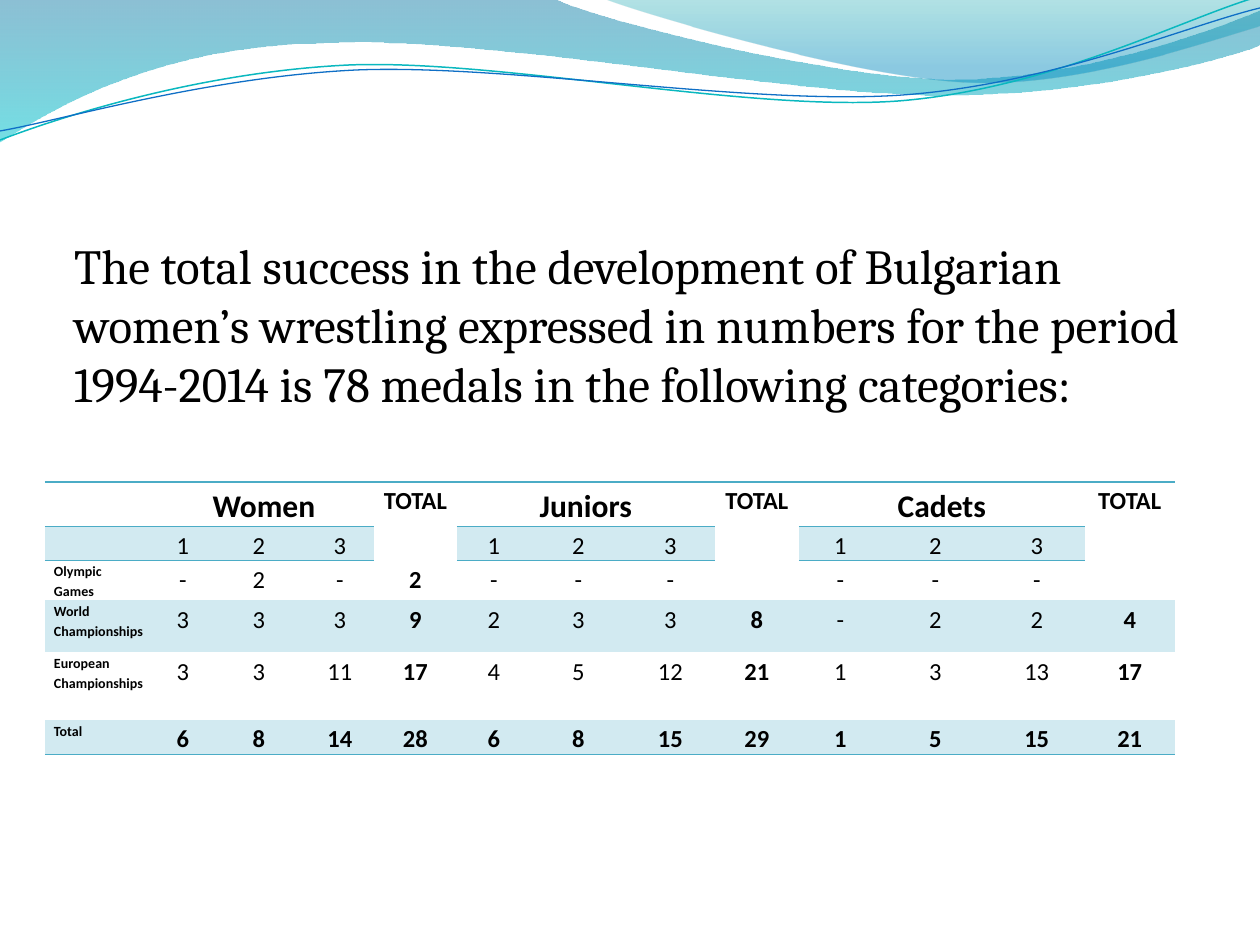
import lxml.etree
import pptx
import pptx.dml.color
import pptx.enum.text
import pptx.oxml.ns
import pptx.util

EMU_PER_PX = 914400 / 126
PLAIN_TABLE = "{2D5ABB26-0587-4C30-8999-92F81FD0307C}"
LEFT = pptx.enum.text.PP_ALIGN.LEFT
CENTER = pptx.enum.text.PP_ALIGN.CENTER

HEADLINE = (
    "The total success in the development of Bulgarian women’s wrestling "
    "expressed in numbers for the period 1994-2014 is 78 medals in the "
    "following categories:"
)
MEDALS = [
    ["", "Women", "", "", "TOTAL", "Juniors", "", "", "TOTAL", "Cadets", "", "", "TOTAL"],
    ["", "1", "2", "3", "", "1", "2", "3", "", "1", "2", "3", ""],
    ["Olympic Games", "-", "2", "-", "2", "-", "-", "-", "", "-", "-", "-", ""],
    ["World Championships", "3", "3", "3", "9", "2", "3", "3", "8", "-", "2", "2", "4"],
    ["European Championships", "3", "3", "11", "17", "4", "5", "12", "21", "1", "3", "13", "17"],
    ["Total", "6", "8", "14", "28", "6", "8", "15", "29", "1", "5", "15", "21"],
]
COLUMN_WIDTHS = [109, 58, 94, 68, 83, 74, 95, 89, 84, 83, 107, 96, 90]
ROW_HEIGHTS = [44, 34, 34, 52, 68, 34]
GROUP_COLUMNS = (1, 5, 9)
TOTAL_COLUMNS = (4, 8, 12)

BROAD_WAVE = [
    (0, 0), (554, -1), (600, 21, 837, 79, 955, 79), (1075, 79, 1207, 33, 1260, 11),
    (1261, 45), (1239, 55, 1096, 96, 940, 95), (784, 95, 481, 35, 324, 43),
    (163, 45, 58, 105, -1, 142),
]
RIGHT_WAVE = [
    (604, -1), (641, 14, 859, 78, 969, 82), (1079, 87, 1211, 40, 1260, 26), (1260, 0),
]
TEAL_STROKE = [
    (0, 140), (60, 117, 199, 72, 349, 65), (498, 59, 747, 112, 898, 101),
    (1050, 89, 1182, 19, 1257, -3),
]
BLUE_STROKE = [
    (0, 131), (59, 121, 207, 77, 357, 70), (508, 64, 752, 106, 903, 95),
    (1053, 84, 1186, 26, 1260, 8),
]


def px(length):
    """Turn pixels into EMU."""
    return pptx.util.Emu(round(length * EMU_PER_PX))


def color(value):
    """Turn a hex string into a colour."""
    return pptx.dml.color.RGBColor.from_string(value)


def sub(parent, tag, **attributes):
    """Append a DrawingML child element."""
    return lxml.etree.SubElement(parent, pptx.oxml.ns.qn(tag), **attributes)


def write(frame, text, *, size, font, ink="000000", bold=False, align=LEFT, spacing=None):
    """Put formatted text into a text frame."""
    paragraph = frame.paragraphs[0]
    paragraph.alignment = align
    paragraph.line_spacing = spacing
    if not text:
        sub(paragraph._p, "a:endParaRPr", sz=str(size * 100))
        return
    run = paragraph.add_run()
    run.text = text
    run.font.size = pptx.util.Pt(size)
    run.font.name = font
    run.font.bold = bold
    run.font.color.rgb = color(ink)


def bend(shape, segments):
    """Turn the straight sides that have control points into cubic curves."""
    sides = list(shape._element.iter(pptx.oxml.ns.qn("a:lnTo")))
    for side, segment in zip(sides, segments):
        if len(segment) == 2:
            continue
        curve = lxml.etree.Element(pptx.oxml.ns.qn("a:cubicBezTo"))
        for x, y in zip(segment[::2], segment[1::2]):
            sub(curve, "a:pt", x=str(px(x) - shape.left), y=str(px(y) - shape.top))
        side.getparent().replace(side, curve)


class Deck:
    """Hold the style and the current slide."""

    heading_font = "Cambria"
    table_font = "Calibri"
    rule = "4BACC6"
    band = "D2EAF1"

    def __init__(self):
        """Start a deck with one title-only slide."""
        self.presentation = pptx.Presentation()
        self.presentation.slide_width = px(1260)
        self.presentation.slide_height = px(945)
        self.slide = self.presentation.slides.add_slide(self.presentation.slide_layouts[5])

    def outline(self, segments, close):
        """Draw a bare curved freeform."""
        anchors = [(px(segment[-2]), px(segment[-1])) for segment in segments]
        builder = self.slide.shapes.build_freeform(*anchors[0])
        builder.add_line_segments(anchors[1:], close=close)
        shape = builder.convert_to_shape()
        shape.shadow.inherit = False
        bend(shape, segments[1:])
        return shape

    def wave(self, segments, stops):
        """Draw a closed wave with a translucent vertical gradient."""
        shape = self.outline(segments, True)
        shape.line.fill.background()
        shape.fill.gradient()
        shape.fill.gradient_angle = 270
        for stop, (position, shade, opacity) in zip(shape.fill.gradient_stops, stops):
            stop.position = position
            stop.color.rgb = color(shade)
            sub(stop._gs[0], "a:alpha", val=str(opacity * 1000))

    def stroke(self, segments, shade, width):
        """Draw an open curved line."""
        shape = self.outline(segments, False)
        shape.fill.background()
        shape.line.color.rgb = color(shade)
        shape.line.width = pptx.util.Pt(width)

    def title(self, text, left, top, width, height):
        """Place and format the title."""
        heading = self.slide.shapes.title
        heading.left, heading.top = px(left), px(top)
        heading.width, heading.height = px(width), px(height)
        frame = heading.text_frame
        frame.word_wrap = True
        frame.auto_size = pptx.enum.text.MSO_AUTO_SIZE.NONE
        frame.vertical_anchor = pptx.enum.text.MSO_ANCHOR.BOTTOM
        frame.margin_left = frame.margin_right = frame.margin_bottom = 0
        frame.margin_top = px(6)
        write(frame, text, size=28, font=self.heading_font)

    def border(self, cell, tag):
        """Rule one side of a cell."""
        line = sub(cell._tc.get_or_add_tcPr(), tag, w="12700")
        sub(sub(line, "a:solidFill"), "a:srgbClr", val=self.rule)

    def medal_cell(self, cell, text, row, column):
        """Format one cell by its place in the table."""
        in_total = column in TOTAL_COLUMNS
        last_row = row == len(MEDALS) - 1
        cell.margin_left = cell.margin_right = px(9)
        cell.margin_top = cell.margin_bottom = 0
        if row == 0 or (row == 1 and not in_total):
            self.border(cell, "a:lnT")
        if last_row or (row == 0 and not in_total):
            self.border(cell, "a:lnB")
        if row % 2 and not (row == 1 and in_total):
            cell.fill.solid()
            cell.fill.fore_color.rgb = color(self.band)
        else:
            cell.fill.background()
        size = 8 if column == 0 else 18 if row == 0 and not in_total else 14
        write(cell.text_frame, text, size=size, font=self.table_font,
              bold=row == 0 or last_row or column == 0 or in_total,
              align=CENTER if column else LEFT, spacing=1.15)

    def medal_table(self, left, top):
        """Build the medal table."""
        table = self.slide.shapes.add_table(
            len(MEDALS), len(COLUMN_WIDTHS), px(left), px(top),
            px(sum(COLUMN_WIDTHS)), px(sum(ROW_HEIGHTS))).table
        table.first_row = table.horz_banding = False
        table._tbl.tblPr.find(pptx.oxml.ns.qn("a:tableStyleId")).text = PLAIN_TABLE
        for column, width in zip(table.columns, COLUMN_WIDTHS):
            column.width = px(width)
        for row, height in zip(table.rows, ROW_HEIGHTS):
            row.height = px(height)
        for row, values in enumerate(MEDALS):
            for column, text in enumerate(values):
                self.medal_cell(table.cell(row, column), text, row, column)
        for group, total in zip(GROUP_COLUMNS, TOTAL_COLUMNS):
            table.cell(0, group).merge(table.cell(0, group + 2))
            table.cell(0, total).merge(table.cell(1, total))


def main():
    """Build and save the slide."""
    deck = Deck()
    deck.wave(BROAD_WAVE, [(0, "0074A1", 45), (1, "00C6CF", 55)])
    deck.wave(RIGHT_WAVE, [(0, "00A1A9", 30), (0.8, "008BBF", 45)])
    deck.stroke(TEAL_STROKE, "0AB8BF", 0.85)
    deck.stroke(BLUE_STROKE, "0F6FC6", 0.75)
    deck.title(HEADLINE, 74, 254, 1134, 158)
    deck.medal_table(45, 482)
    deck.presentation.save("out.pptx")


if __name__ == "__main__":
    main()
